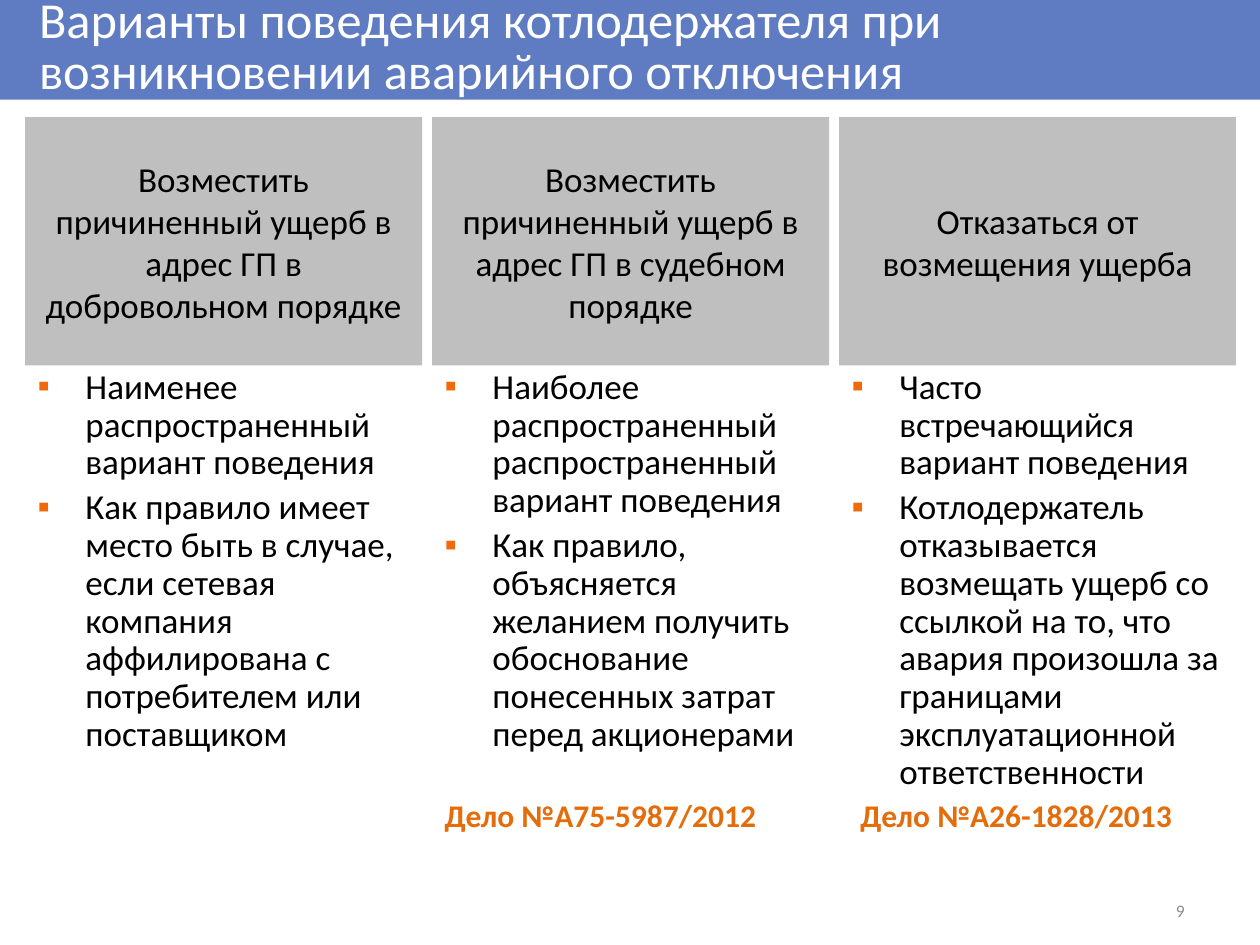
from dataclasses import dataclass

from lxml.etree import SubElement
from pptx import Presentation
from pptx.dml.color import RGBColor
from pptx.enum.shapes import MSO_SHAPE
from pptx.enum.text import MSO_ANCHOR, PP_ALIGN
from pptx.oxml.ns import qn
from pptx.shapes.autoshape import Shape
from pptx.slide import Slide
from pptx.text.text import _Paragraph
from pptx.util import Inches, Pt

COLORS = {
    "band": "5F7CC3",
    "card": "BFBFBF",
    "bullet": "F0690A",
    "case": "E46C0A",
    "number": "8C8C8C",
    "white": "FFFFFF",
    "black": "000000",
}
FONT = "Calibri"
SLIDE_WIDTH, SLIDE_HEIGHT = 10, 7.5
BAND_HEIGHT = 0.79
MARGIN, COLUMN_WIDTH, COLUMN_STEP = 0.2, 3.15, 3.23
CARD_TOP, CARD_HEIGHT = 0.93, 1.97
POINTS_TOP, CASE_TOP = 2.88, 6.27
INDENT = 0.38


@dataclass(frozen=True)
class Box:
    left: float
    top: float
    width: float
    height: float

    def emu(self) -> tuple[int, ...]:
        return tuple(Inches(v) for v in (self.left, self.top, self.width, self.height))


@dataclass(frozen=True)
class Option:
    heading: str
    points: tuple[str, ...]
    points_height: float = 3.2
    case: str = ""
    case_shift: float = 0


OPTIONS = (
    Option(
        "Возместить причиненный ущерб в адрес ГП в добровольном порядке",
        (
            "Наименее распространенный вариант поведения",
            "Как правило имеет место быть в случае, если сетевая компания "
            "аффилирована с потребителем или поставщиком",
        ),
    ),
    Option(
        "Возместить причиненный ущерб в адрес ГП в судебном порядке",
        (
            "Наиболее распространенный распространенный вариант поведения",
            "Как правило, объясняется желанием получить обоснование "
            "понесенных затрат перед акционерами",
        ),
        case="Дело №А75-5987/2012",
    ),
    Option(
        "Отказаться от возмещения ущерба",
        (
            "Часто встречающийся вариант поведения",
            "Котлодержатель отказывается возмещать ущерб со ссылкой на то, что "
            "авария произошла за границами эксплуатационной ответственности",
        ),
        points_height=3.5,
        case="Дело №А26-1828/2013",
        case_shift=0.07,
    ),
)


def style(paragraph: _Paragraph, size: float, color: str, bold: bool = False) -> None:
    for run in paragraph.runs:
        run.font.name = FONT
        run.font.size = Pt(size)
        run.font.bold = bold
        run.font.color.rgb = RGBColor.from_string(COLORS[color])


def add_block(slide: Slide, box: Box, color: str) -> Shape:
    block = slide.shapes.add_shape(MSO_SHAPE.RECTANGLE, *box.emu())
    block.shadow.inherit = False
    block.fill.solid()
    block.fill.fore_color.rgb = RGBColor.from_string(COLORS[color])
    block.line.fill.background()
    return block


def add_text(slide: Slide, box: Box, text: str, size: float, color: str,
             bold: bool = False, anchor: MSO_ANCHOR = MSO_ANCHOR.TOP) -> Shape:
    label = slide.shapes.add_textbox(*box.emu())
    frame = label.text_frame
    frame.word_wrap = True
    frame.vertical_anchor = anchor
    frame.text = text
    for paragraph in frame.paragraphs:
        style(paragraph, size, color, bold)
    return label


def add_bullet(paragraph: _Paragraph) -> None:
    properties = paragraph._p.get_or_add_pPr()
    properties.set("marL", str(Inches(INDENT)))
    properties.set("indent", str(-Inches(INDENT)))
    bullet_color = SubElement(properties, qn("a:buClr"))
    SubElement(bullet_color, qn("a:srgbClr"), val=COLORS["bullet"])
    SubElement(properties, qn("a:buFont"), typeface="Arial")
    SubElement(properties, qn("a:buChar"), char="▪")


def add_title(slide: Slide, text: str) -> None:
    add_block(slide, Box(0, 0, SLIDE_WIDTH, BAND_HEIGHT), "band")
    title = add_text(slide, Box(0.27, -0.01, 8.66, BAND_HEIGHT), text, 28.8, "white",
                     anchor=MSO_ANCHOR.MIDDLE)
    frame = title.text_frame
    frame.margin_left = frame.margin_right = Inches(0.04)
    frame.margin_top = frame.margin_bottom = Inches(0.04)
    frame.paragraphs[0].line_spacing = 0.85


def add_option(slide: Slide, column: int, option: Option) -> None:
    left = MARGIN + column * COLUMN_STEP

    card = add_block(slide, Box(left, CARD_TOP, COLUMN_WIDTH, CARD_HEIGHT), "card")
    card.text_frame.word_wrap = True
    card.text_frame.vertical_anchor = MSO_ANCHOR.MIDDLE
    card.text_frame.text = option.heading
    heading = card.text_frame.paragraphs[0]
    heading.alignment = PP_ALIGN.CENTER
    style(heading, 20, "black")

    points = add_text(slide, Box(left, POINTS_TOP, COLUMN_WIDTH, option.points_height),
                      "\n".join(option.points), 20, "black")
    for index, paragraph in enumerate(points.text_frame.paragraphs):
        add_bullet(paragraph)
        paragraph.line_spacing = 0.9
        paragraph.space_before = Pt(4 if index else 0)

    if option.case:
        case_box = Box(left + option.case_shift, CASE_TOP,
                       COLUMN_WIDTH - option.case_shift, 0.4)
        add_text(slide, case_box, option.case, 18, "case", bold=True)


def main() -> None:
    presentation = Presentation()
    presentation.slide_width = Inches(SLIDE_WIDTH)
    presentation.slide_height = Inches(SLIDE_HEIGHT)
    slide = presentation.slides.add_slide(presentation.slide_layouts[6])

    add_title(slide, "Варианты поведения котлодержателя при возникновении "
                     "аварийного отключения")
    for column, option in enumerate(OPTIONS):
        add_option(slide, column, option)
    page_number = add_text(slide, Box(9.06, 7.11, 0.44, 0.24), "9", 10, "number",
                           anchor=MSO_ANCHOR.MIDDLE)
    page_number.text_frame.paragraphs[0].alignment = PP_ALIGN.RIGHT

    presentation.save("out.pptx")


if __name__ == "__main__":
    main()
